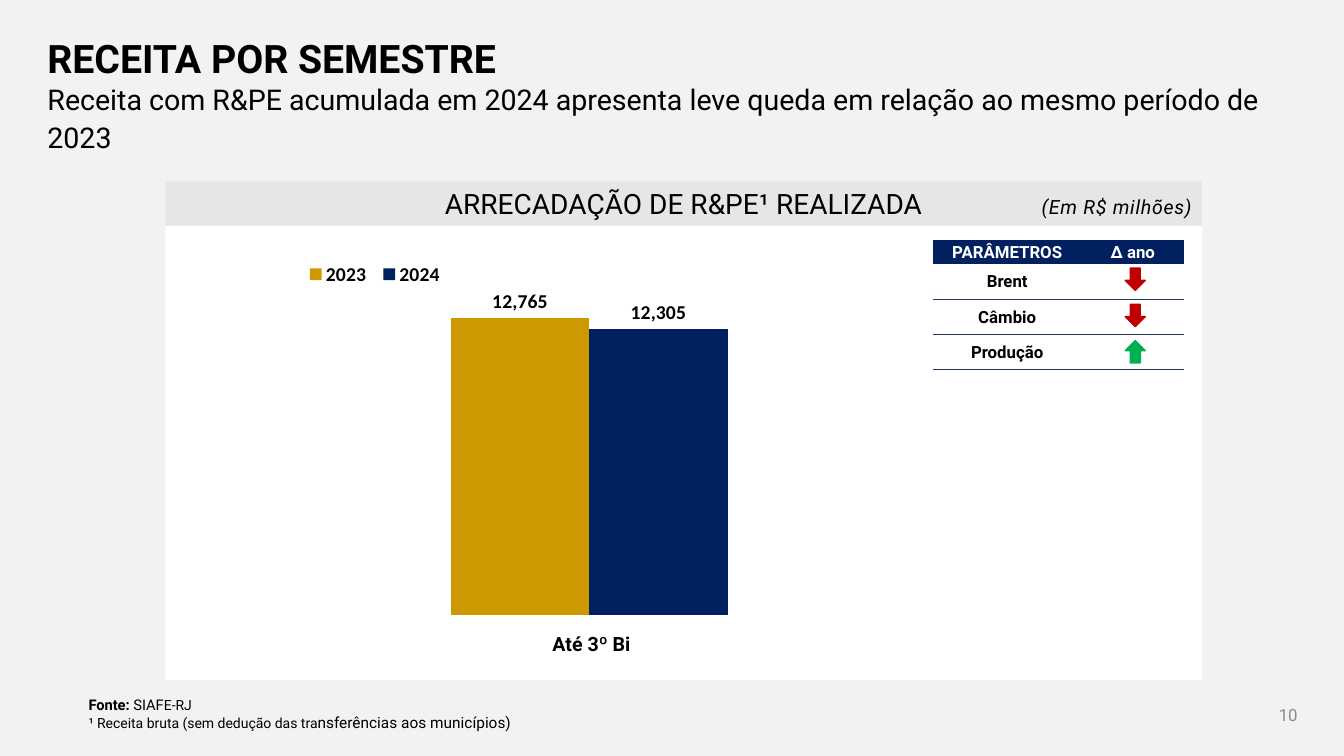
from lxml import etree
from pptx import Presentation
from pptx.chart.data import CategoryChartData
from pptx.dml.color import RGBColor
from pptx.enum.chart import XL_CHART_TYPE, XL_LABEL_POSITION, XL_LEGEND_POSITION, XL_TICK_LABEL_POSITION, XL_TICK_MARK
from pptx.enum.shapes import MSO_SHAPE
from pptx.enum.text import MSO_ANCHOR, MSO_AUTO_SIZE, PP_ALIGN
from pptx.oxml.ns import qn
from pptx.util import Inches, Pt

COLUMNS = XL_CHART_TYPE.COLUMN_CLUSTERED
OUTSIDE_END = XL_LABEL_POSITION.OUTSIDE_END
LEGEND_TOP = XL_LEGEND_POSITION.TOP
NO_LABELS = XL_TICK_LABEL_POSITION.NONE
NO_TICKS = XL_TICK_MARK.NONE
RECTANGLE, DOWN_ARROW = MSO_SHAPE.RECTANGLE, MSO_SHAPE.DOWN_ARROW
TOP, MIDDLE = MSO_ANCHOR.TOP, MSO_ANCHOR.MIDDLE
LEFT, CENTER, RIGHT = PP_ALIGN.LEFT, PP_ALIGN.CENTER, PP_ALIGN.RIGHT
FIXED = MSO_AUTO_SIZE.NONE

COLORS = {"page": "F2F2F2", "band": "E7E6E6", "white": "FFFFFF", "black": "000000",
          "navy": "002060", "gold": "CC9900", "rule": "203864",
          "down": "C00000", "up": "00B050", "number": "8C8C8C"}
PLAIN_TABLE = "{2D5ABB26-0587-4C30-8999-92F81FD0307C}"


def rgb(name):
    return RGBColor.from_string(COLORS[name])


def write(para, text, size, color="black", bold=False, italic=False, spacing=None):
    span = para.add_run()
    span.text = text
    font = span.font
    font.name, font.size, font.bold, font.italic = "Roboto", Pt(size), bold, italic
    font.color.rgb = rgb(color)
    if spacing:
        font._element.set("spc", str(spacing))


def prepare(shape, box, anchor=TOP, align=LEFT, leading=None):
    """Place a text shape and return its first paragraph."""
    shape.left, shape.top, shape.width, shape.height = (Inches(value) for value in box)
    frame = shape.text_frame
    frame.word_wrap, frame.auto_size, frame.vertical_anchor = True, FIXED, anchor
    para = frame.paragraphs[0]
    para.alignment, para.line_spacing = align, leading
    return para


def add_text_box(page, box, **layout):
    return prepare(page.shapes.add_textbox(0, 0, 0, 0), box, **layout)


def add_filled(page, kind, box, color, outlined=False):
    shape = page.shapes.add_shape(kind, *(Inches(value) for value in box))
    shape.shadow.inherit = False
    shape.fill.solid()
    shape.fill.fore_color.rgb = rgb(color)
    if outlined:
        shape.line.color.rgb = rgb(color)
        shape.line.width = Pt(1)
    else:
        shape.line.fill.background()
    return shape


def add_heading(page, left, top):
    para = prepare(page.shapes.title, (left, top, 8.89, 0.79), anchor=MIDDLE, leading=0.9)
    write(para, "RECEITA POR SEMESTRE", 28, bold=True)
    para = prepare(page.placeholders[1], (left, top + 0.65, 12.6, 0.59), anchor=MIDDLE, leading=1.1)
    properties = para._p.get_or_add_pPr()
    properties.set("marL", "0")
    properties.set("indent", "0")
    etree.SubElement(properties, qn("a:buNone"))
    para.space_before = Pt(0)
    write(para, "Receita com R&PE acumulada em 2024 apresenta leve queda em relação "
                "ao mesmo período de 2023", 20.4)


def set_manual_layout(element, left, top, width, height, inner=False):
    """Fix the place of a chart part, in fractions of the chart."""
    layout = element.find(qn("c:layout"))
    if layout is None:
        layout = etree.Element(qn("c:layout"))
        element.insert(0 if inner else 1, layout)
    manual = etree.SubElement(layout, qn("c:manualLayout"))
    settings = [("layoutTarget", "inner")] if inner else []
    settings += [("xMode", "edge"), ("yMode", "edge"),
                 ("x", left), ("y", top), ("w", width), ("h", height)]
    for name, value in settings:
        etree.SubElement(manual, qn("c:" + name)).set("val", str(value))


def format_chart_font(font, size, bold=False):
    font.name, font.size, font.bold = "Calibri", Pt(size), bold
    font.color.rgb = rgb("black")


def add_revenue_chart(page, left, top, width, height):
    data = CategoryChartData(number_format="#,##0,,")
    data.categories = ["1"]
    data.add_series("2023", [12765000000])
    data.add_series("2024", [12305000000])
    box = (Inches(value) for value in (left, top, width, height))
    chart = page.shapes.add_chart(COLUMNS, *box, data).chart
    format_chart_font(chart.font, 10)
    chart.has_title = False
    chart.has_legend = True
    chart.legend.position = LEGEND_TOP
    chart.legend.include_in_layout = False
    format_chart_font(chart.legend.font, 14, bold=True)
    set_manual_layout(chart.legend._element, 0.02, 0.04, 0.25, 0.08)
    set_manual_layout(chart._chartSpace.chart.plotArea, 0.02, 0.12, 0.96, 0.86, inner=True)

    chart.category_axis.visible = False
    axis = chart.value_axis
    axis.minimum_scale, axis.maximum_scale = 0, 14000000000
    axis.has_major_gridlines = False
    axis.major_tick_mark = axis.minor_tick_mark = NO_TICKS
    axis.tick_label_position = NO_LABELS
    axis.format.line.fill.background()

    plot = chart.plots[0]
    plot.gap_width, plot.overlap, plot.vary_by_categories = 219, 0, False
    for series, color in zip(plot.series, ("gold", "navy")):
        series.format.fill.solid()
        series.format.fill.fore_color.rgb = rgb(color)
        labels = series.data_labels
        labels.show_value, labels.position = True, OUTSIDE_END
        labels.number_format, labels.number_format_is_linked = "#,##0,,", False
        format_chart_font(labels.font, 14, bold=True)


def add_bottom_rule(cell):
    line = etree.SubElement(cell._tc.get_or_add_tcPr(), qn("a:lnB"), w=str(Pt(1)))
    fill = etree.SubElement(line, qn("a:solidFill"))
    etree.SubElement(fill, qn("a:srgbClr"), val=COLORS["rule"])


def add_parameter_table(page, left, top):
    header_height, row_height = 0.24, 0.35
    rows = [("PARÂMETROS", "∆ ano"), ("Brent", "down"), ("Câmbio", "down"), ("Produção", "up")]
    height = header_height + row_height * (len(rows) - 1)
    frame = page.shapes.add_table(len(rows), 2, Inches(left), Inches(top), Inches(2.49), Inches(height))
    table = frame.table
    table.first_row = table.horz_banding = False
    table._tbl.tblPr.find(qn("a:tableStyleId")).text = PLAIN_TABLE
    for column, width in zip(table.columns, (1.48, 1.01)):
        column.width = Inches(width)
    for index, texts in enumerate(rows):
        header = index == 0
        table.rows[index].height = Inches(header_height if header else row_height)
        for column, text in enumerate(texts):
            cell = table.cell(index, column)
            cell.margin_left = cell.margin_right = cell.margin_top = Inches(0.01)
            cell.margin_bottom = 0
            cell.vertical_anchor = MIDDLE
            if header:
                cell.fill.solid()
                cell.fill.fore_color.rgb = rgb("navy")
            else:
                add_bottom_rule(cell)
                cell.fill.background()
            if header or column == 0:
                para = cell.text_frame.paragraphs[0]
                para.alignment = CENTER
                write(para, text, 12, "white" if header else "black", bold=True)
            else:
                arrow_top = top + 0.28 + 0.36 * (index - 1)
                arrow = add_filled(page, DOWN_ARROW, (left + 1.91, arrow_top, 0.2, 0.22), text, outlined=True)
                arrow.rotation = 180 if text == "up" else 0


def add_revenue_panel(page, left, top, width):
    band_height = 0.44
    band_box = (left, top, width, band_height)
    band = add_filled(page, RECTANGLE, band_box, "band")
    para = prepare(band, band_box, anchor=MIDDLE, align=CENTER)
    write(para, "ARRECADAÇÃO DE R&PE¹ REALIZADA", 20)
    para = add_text_box(page, (left + width - 1.86, top + 0.04, 1.86, 0.4), align=RIGHT, leading=1.2)
    write(para, "(Em R$ milhões)", 14, italic=True, spacing=50)
    add_filled(page, RECTANGLE, (left, top + band_height, width, 4.51), "white")
    add_parameter_table(page, left + 7.61, top + 0.58)
    write(add_text_box(page, (left + 3.74, top + 4.42, 1.89, 0.34)), "Até 3º Bi", 14, bold=True)
    add_revenue_chart(page, left + 1.21, top + 0.62, 5.99, 3.76)


def add_footer(page, left, top):
    para = add_text_box(page, (left, top, 11, 0.46))
    write(para, "Fonte: ", 10.5, bold=True)
    write(para, "SIAF", 10.5)
    write(para, "E-RJ", 10)
    note = para._parent.add_paragraph()
    write(note, "¹ Receita bruta (sem dedução das tra", 10)
    write(note, "nsferências aos municípios)", 11)
    number = add_text_box(page, (12.01, top + 0.04, 0.96, 0.4), anchor=MIDDLE, align=RIGHT)
    write(number, "10", 12, "number")


def main():
    deck = Presentation()
    deck.slide_width, deck.slide_height = Inches(13.33), Inches(7.5)
    page = deck.slides.add_slide(deck.slide_layouts[1])
    page.background.fill.solid()
    page.background.fill.fore_color.rgb = rgb("page")
    add_heading(page, 0.37, 0.21)
    add_revenue_panel(page, 1.64, 1.8, 10.28)
    add_footer(page, 0.78, 6.85)
    deck.save("out.pptx")


if __name__ == "__main__":
    main()
